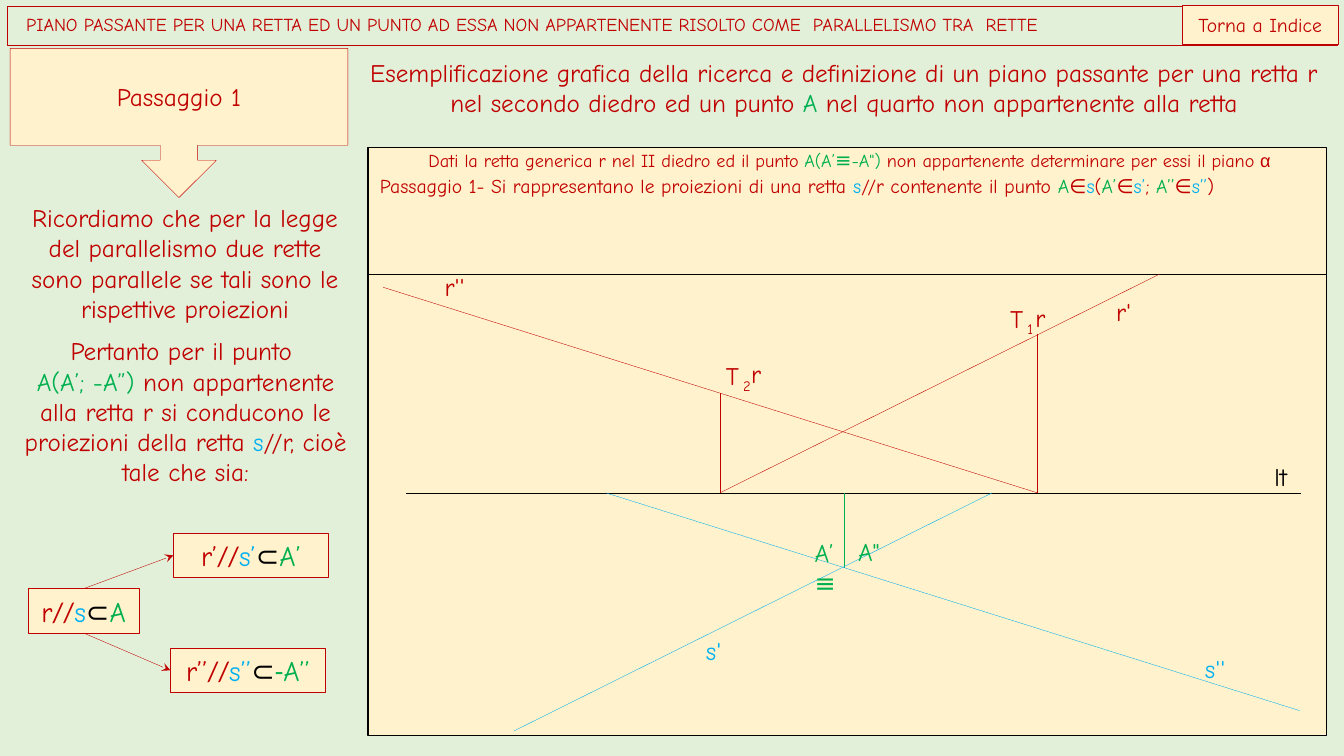
from lxml import etree
from pptx import Presentation
from pptx.dml.color import RGBColor
from pptx.enum.shapes import MSO_CONNECTOR, MSO_SHAPE
from pptx.enum.text import MSO_ANCHOR, MSO_AUTO_SIZE, PP_ALIGN
from pptx.oxml.ns import qn
from pptx.util import Inches, Pt

RECTANGLE, CALLOUT = MSO_SHAPE.RECTANGLE, MSO_SHAPE.DOWN_ARROW_CALLOUT
STRAIGHT = MSO_CONNECTOR.STRAIGHT
LEFT, CENTER = PP_ALIGN.LEFT, PP_ALIGN.CENTER
TOP, MIDDLE = MSO_ANCHOR.TOP, MSO_ANCHOR.MIDDLE
FIT_SHAPE, NO_FIT = MSO_AUTO_SIZE.SHAPE_TO_FIT_TEXT, MSO_AUTO_SIZE.NONE
SIDE_TOP, SIDE_LEFT, SIDE_BOTTOM = 0, 1, 2

RED, GREEN, BLUE, BLACK = "C00000", "00B050", "00B0F0", "000000"
CREAM, PALE_GREEN = "FFF2CC", "E2F0D9"
COMIC, CALIBRI, ARIAL = "Comic Neue", "Calibri", "Arial"
HAIRLINE = 0.25


def color(hex_string):
    return RGBColor.from_string(hex_string)


class SlideBuilder:
    def __init__(self, slide):
        self.slide = slide
        fill = slide.background.fill
        fill.solid()
        fill.fore_color.rgb = color(PALE_GREEN)

    def add_runs(self, shape, paragraphs, size, align=CENTER, anchor=TOP):
        """Fill a shape with paragraphs of (text, colour, font, size) runs; only the text is required."""
        frame = shape.text_frame
        frame.word_wrap = True
        frame.vertical_anchor = anchor
        for index, runs in enumerate(paragraphs):
            paragraph = frame.add_paragraph() if index else frame.paragraphs[0]
            paragraph.alignment = align
            for text, *style in runs:
                ink, font_name, run_size = style + [RED, COMIC, size][len(style):]
                run = paragraph.add_run()
                run.text = text
                run.font.name = font_name
                run.font.size = Pt(run_size)
                run.font.color.rgb = color(ink)

    def outline(self, shape, ink=RED, width=HAIRLINE):
        shape.line.color.rgb = color(ink)
        shape.line.width = Pt(width)

    def title(self, text, left, top, width, height):
        title = self.slide.shapes.title
        title.left, title.top = Inches(left), Inches(top)
        title.width, title.height = Inches(width), Inches(height)
        self.outline(title)
        self.add_runs(title, [[(text,)]], 13, LEFT, MIDDLE)
        title.text_frame.auto_size = NO_FIT
        title.text_frame.margin_left = Inches(0.19)
        title.text_frame.paragraphs[0].line_spacing = 0.9

    def box(self, left, top, width, height, runs=(), size=18, kind=RECTANGLE,
            ink=RED, line_width=HAIRLINE):
        shape = self.slide.shapes.add_shape(
            kind, Inches(left), Inches(top), Inches(width), Inches(height))
        shape.shadow.inherit = False
        shape.fill.solid()
        shape.fill.fore_color.rgb = color(CREAM)
        self.outline(shape, ink, line_width)
        if runs:
            self.add_runs(shape, [runs], size, anchor=MIDDLE)
        return shape

    def text(self, left, top, width, height, paragraphs, size=18, align=CENTER):
        shape = self.slide.shapes.add_textbox(
            Inches(left), Inches(top), Inches(width), Inches(height))
        self.add_runs(shape, paragraphs, size, align)
        shape.text_frame.auto_size = FIT_SHAPE
        return shape

    def remove_margins(self, shape):
        frame = shape.text_frame
        frame.margin_left = frame.margin_right = 0
        frame.margin_top = frame.margin_bottom = 0

    def label(self, text, left, top, width, ink=RED, height=0.3, wrap=False, subscript=False):
        shape = self.text(left, top, width, height, [[(text, ink)]], align=LEFT)
        self.remove_margins(shape)
        shape.text_frame.word_wrap = wrap
        if subscript:
            run = shape.text_frame.paragraphs[0].runs[0]
            run._r.get_or_add_rPr().set("baseline", "-25000")

    def trace_label(self, number, left, top):
        """Place T, its subscript number and r side by side."""
        self.label("T", left, top, 0.17)
        self.label(number, left + 0.17, top, 0.09, height=0.2, subscript=True)
        self.label("r", left + 0.25, top - 0.01, 0.12)

    def line(self, x1, y1, x2, y2, ink=RED):
        connector = self.slide.shapes.add_connector(
            STRAIGHT, Inches(x1), Inches(y1), Inches(x2), Inches(y2))
        self.outline(connector, ink)
        etree.SubElement(connector._element.spPr, qn("a:effectLst"))
        return connector

    def arrow(self, source, source_side, target, target_side):
        connector = self.line(0, 0, 1, 1)
        connector.begin_connect(source, source_side)
        connector.end_connect(target, target_side)
        line_properties = connector._element.spPr.find(qn("a:ln"))
        etree.SubElement(line_properties, qn("a:tailEnd"), type="stealth")


def add_explanation(builder):
    builder.box(0.1, 0.48, 3.35, 1.48, [("Passaggio 1",)], kind=CALLOUT)
    builder.text(3.45, 0.52, 9.84, 0.71, [[
        ("Esemplificazione grafica della ricerca e definizione di un piano passante "
         "per una retta r nel secondo diedro ed un punto ",),
        ("A ", GREEN), ("nel quarto non appartenente alla retta",)]])
    builder.text(0.13, 3.28, 3.42, 1.62, [
        [("Pertanto per il punto ",)],
        [("A(A’; -A”) ", GREEN),
         ("non appartenente alla retta r si conducono le proiezioni della retta ",),
         ("s", BLUE), ("//r, cioè tale che sia:",)]])
    builder.text(0.1, 1.96, 3.47, 1.31, [[
        ("Ricordiamo che per la legge del parallelismo due rette sono parallele "
         "se tali sono le rispettive proiezioni",)]])


def add_relations(builder):
    def relation(left, top, width, prime, sign=""):
        runs = [("r" + prime,), ("//", RED, CALIBRI), ("s" + prime, BLUE),
                ("⊂", BLACK, CALIBRI)]
        if sign:
            runs.append((sign, GREEN, CALIBRI))
        runs.append(("A" + prime, GREEN))
        return builder.box(left, top, width, 0.44, runs, 20)

    line_relation = relation(0.28, 5.84, 1.1, "")
    second_projection = relation(1.69, 6.43, 1.54, "’’", "-")
    first_projection = relation(1.72, 5.29, 1.54, "’")
    builder.arrow(line_relation, SIDE_TOP, first_projection, SIDE_LEFT)
    builder.arrow(line_relation, SIDE_BOTTOM, second_projection, SIDE_LEFT)


def add_drawing(builder):
    left, right, horizon, ground = 3.65, 13.16, 2.72, 4.89
    trace_2, trace_1, point_a = 7.14, 10.29, 8.37
    builder.box(left, 1.46, right - left, 5.84, ink=BLACK, line_width=0)
    builder.line(left, horizon, right, horizon, BLACK)
    builder.line(4.03, ground, 12.9, ground, BLACK)
    builder.line(11.5, horizon, trace_2, ground)
    builder.line(3.8, 2.85, trace_1, ground)
    builder.line(point_a, ground, point_a, 5.64, GREEN)
    builder.line(trace_2, ground, trace_2, 3.9)
    builder.line(trace_1, ground, trace_1, 3.31)
    builder.line(9.84, ground, 5.1, 7.25, BLUE)
    builder.line(6.01, ground, 12.89, 7.05, BLUE)

    builder.label("lt", 12.64, 4.58, 0.29, BLACK, height=0.42)
    builder.label("r'", 11.07, 2.94, 0.22)
    builder.label("r''", 4.41, 2.69, 0.32)
    builder.trace_label("1", 10.02, 3.01)
    builder.trace_label("2", 7.2, 3.57)
    builder.label("A’≡", 8.08, 5.33, 0.3, GREEN, height=0.6, wrap=True)
    builder.label('A"', 8.51, 5.32, 0.29, GREEN)
    builder.label("s'", 7, 6.3, 0.22, BLUE)
    builder.label("s''", 11.95, 6.48, 0.32, BLUE)

    problem = builder.text(3.67, 1.47, 9.51, 0.24, [[
        ("Dati la retta generica r nel II diedro ed il punto ",),
        ("A(A’", GREEN), ("≡", GREEN, COMIC, 14), ('-A") ', GREEN),
        ("non appartenente determinare per essi il piano ",), ("α", RED, ARIAL)]], 13)
    builder.remove_margins(problem)
    builder.text(3.67, 1.68, 9.52, 0.34, [[
        ("Passaggio 1- Si rappresentano le proiezioni di una retta",), (" s", BLUE),
        ("//r contenente il punto ",), ("A", GREEN), ("∈",), ("s", BLUE), ("(",),
        ("A’", GREEN), ("∈",), ("s’", BLUE), ("; ",),
        ("A’’", GREEN), ("∈",), ("s’’", BLUE), (")",)]], 14, LEFT)


def main():
    presentation = Presentation()
    presentation.slide_width, presentation.slide_height = Inches(13.33), Inches(7.5)
    builder = SlideBuilder(presentation.slides.add_slide(presentation.slide_layouts[5]))
    builder.title("PIANO PASSANTE PER UNA RETTA ED UN PUNTO AD ESSA NON APPARTENENTE "
                  "RISOLTO COME  PARALLELISMO TRA  RETTE", 0.07, 0.06, 13.19, 0.39)
    builder.box(11.73, 0.05, 1.54, 0.39, [("Torna a Indice",)], 14)
    add_explanation(builder)
    add_relations(builder)
    add_drawing(builder)
    presentation.save("out.pptx")


if __name__ == "__main__":
    main()
